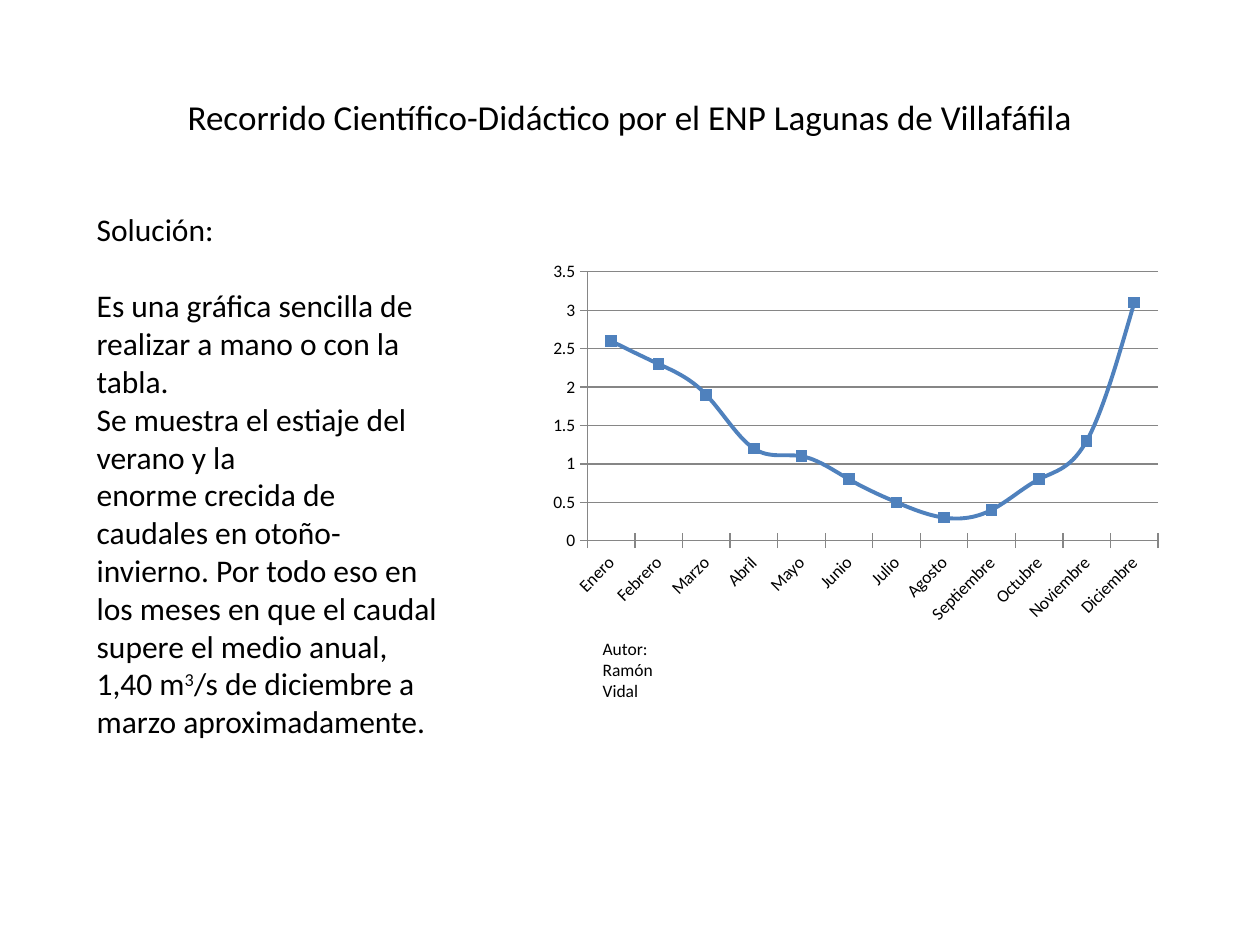
from pptx import Presentation
from pptx.chart.data import CategoryChartData
from pptx.dml.color import RGBColor
from pptx.enum.chart import XL_CHART_TYPE, XL_MARKER_STYLE, XL_TICK_MARK
from pptx.enum.text import MSO_ANCHOR, PP_ALIGN
from pptx.util import Cm, Pt

LINE_MARKERS = XL_CHART_TYPE.LINE_MARKERS
SQUARE = XL_MARKER_STYLE.SQUARE
CROSS = XL_TICK_MARK.CROSS
MIDDLE = MSO_ANCHOR.MIDDLE
CENTER = PP_ALIGN.CENTER
BLACK = RGBColor(0x00, 0x00, 0x00)
BLUE = RGBColor(0x4F, 0x81, 0xBD)
GRAY = RGBColor(0x86, 0x86, 0x86)
FONT = "Calibri"

TITLE = "Recorrido Científico-Didáctico por el ENP Lagunas de Villafáfila"
SOLUTION = [
    ["Solución:"],
    ["Es una gráfica sencilla de"],
    ["realizar a mano o con la tabla."],
    ["Se muestra el estiaje del verano y la"],
    ["enorme crecida de caudales en otoño-invierno. Por todo eso en los meses "
     "en que el caudal supere el medio anual, 1,40 m",
     "3",
     "/s de diciembre a marzo aproximadamente."],
]
SUPERSCRIPT = "3"
AUTHOR = [["Autor:"], ["Ramón Vidal"]]
MONTHLY_FLOW = {
    "Enero": 2.6, "Febrero": 2.3, "Marzo": 1.9, "Abril": 1.2,
    "Mayo": 1.1, "Junio": 0.8, "Julio": 0.5, "Agosto": 0.3,
    "Septiembre": 0.4, "Octubre": 0.8, "Noviembre": 1.3, "Diciembre": 3.1,
}


def style_font(font, size):
    font.name = FONT
    font.size = Pt(size)
    font.color.rgb = BLACK


def add_text(slide, paragraphs, box, size):
    text_frame = slide.shapes.add_textbox(*box).text_frame
    text_frame.word_wrap = True
    for index, parts in enumerate(paragraphs):
        paragraph = text_frame.add_paragraph() if index else text_frame.paragraphs[0]
        for part in parts:
            run = paragraph.add_run()
            run.text = part
            style_font(run.font, size)
            if part == SUPERSCRIPT:
                run._r.get_or_add_rPr().set("baseline", "30000")
    return text_frame


def add_title(slide):
    title = slide.shapes.title
    title.left, title.top, title.width, title.height = Cm(1.27), Cm(0.76), Cm(22.86), Cm(3.18)
    title.text_frame.text = TITLE
    title.text_frame.vertical_anchor = MIDDLE
    paragraph = title.text_frame.paragraphs[0]
    paragraph.alignment = CENTER
    style_font(paragraph.runs[0].font, 20)


def add_flow_chart(slide):
    data = CategoryChartData()
    data.categories = list(MONTHLY_FLOW)
    data.add_series("Series 1", list(MONTHLY_FLOW.values()))
    chart = slide.shapes.add_chart(
        LINE_MARKERS, Cm(10.9), Cm(5.13), Cm(12.7), Cm(7.6), data).chart
    chart.has_legend = False
    chart.has_title = False
    style_font(chart.font, 10)

    plot = chart.plots[0]
    plot.vary_by_categories = False
    series = plot.series[0]
    series.smooth = True
    series.format.line.color.rgb = BLUE
    series.format.line.width = Pt(2.25)
    series.marker.style = SQUARE
    series.marker.size = 6
    series.marker.format.fill.solid()
    series.marker.format.fill.fore_color.rgb = BLUE
    series.marker.format.line.color.rgb = BLUE

    for axis in (chart.category_axis, chart.value_axis):
        axis.major_tick_mark = CROSS
        axis.format.line.color.rgb = GRAY
        style_font(axis.tick_labels.font, 10)
    chart.category_axis._element.txPr.bodyPr.set("rot", "-2700000")
    value_axis = chart.value_axis
    value_axis.minimum_scale = 0
    value_axis.maximum_scale = 3.5
    value_axis.major_unit = 0.5
    value_axis.has_major_gridlines = True
    value_axis.major_gridlines.format.line.color.rgb = GRAY


def main():
    presentation = Presentation()
    presentation.slide_width = Cm(25.4)
    presentation.slide_height = Cm(19.05)
    slide = presentation.slides.add_slide(presentation.slide_layouts[5])
    add_title(slide)
    add_flow_chart(slide)
    solution = add_text(slide, SOLUTION, (Cm(1.7), Cm(4.11), Cm(7.6), Cm(11.02)), 18)
    solution.paragraphs[0].space_after = Pt(22)
    add_text(slide, AUTHOR, (Cm(11.9), Cm(12.73), Cm(1.8), Cm(1.55)), 10)
    presentation.save("out.pptx")


if __name__ == "__main__":
    main()
